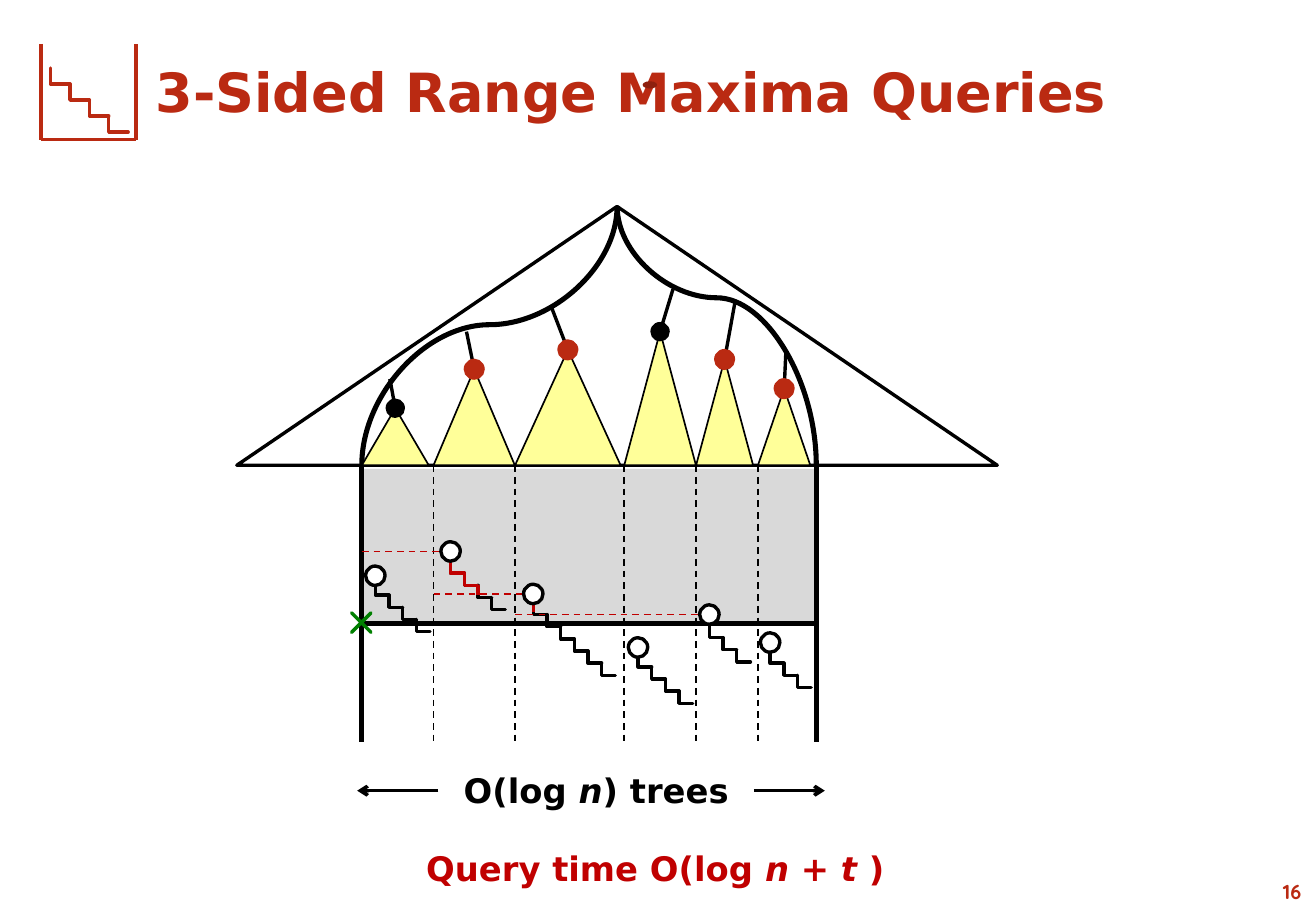
import pptx
import pptx.dml.color
import pptx.enum.dml
import pptx.enum.shapes
import pptx.enum.text
import pptx.util
from lxml import etree

Pt = pptx.util.Pt
MSO = pptx.enum.shapes.MSO_SHAPE
LINK = pptx.enum.shapes.MSO_CONNECTOR
ALIGN = pptx.enum.text.PP_ALIGN
A = "{http://schemas.openxmlformats.org/drawingml/2006/main}"

BLACK, RED, BRICK = "000000", "C00000", "BA2A12"
FONT = "DejaVu Sans"
APEX = (365.8, 122.4)
BASE, BOTTOM, QUERY_Y = 275.8, 440, 369.4
COLUMNS = [214.5, 257, 305.3, 370, 412.6, 449.3, 483.8]
NODE = 11.5
STEP = (8.1, 7.2)

# left, width, root y, end of the link to the search path, root colour
TREES = [
    (214.5, 39.6, 242, (231.1, 224.6), BLACK),
    (257, 48.2, 218.9, (276.5, 196.6), BRICK),
    (305.3, 62.6, 207.4, (326.9, 182.2), BRICK),
    (370, 42.5, 196.6, (398.9, 171.4), BLACK),
    (412.6, 33.8, 213.1, (435.6, 179.3), BRICK),
    (449.3, 31, 230.4, (465.8, 208.8), BRICK),
]
# x, y of the topmost point, y of the first step, steps, reported steps
STAIRCASES = [
    (222.5, 341.3, 345.6, 4, None),
    (267.1, 326.9, 332.6, 4, 2),
    (316.1, 352.1, 357.1, 6, 0),
    (378.2, 383.8, 388.1, 4, None),
    (420.5, 364.3, 370.8, 3, None),
    (456.5, 380.9, 385.9, 3, None),
]


def color(value):
    return pptx.dml.color.RGBColor.from_string(value)


def stroke(sp, value, width):
    sp.line.color.rgb = color(value)
    sp.line.width = Pt(width)


def shape(shapes, kind, box, fill=None, line=None, width=1):
    sp = shapes.add_shape(kind, *map(Pt, box))
    sp.shadow.inherit = False
    if fill:
        sp.fill.solid()
        sp.fill.fore_color.rgb = color(fill)
    else:
        sp.fill.background()
    if line:
        stroke(sp, line, width)
    else:
        sp.line.fill.background()
    return sp


def connector(shapes, start, end, value=BLACK, width=2, dash=False, kind=LINK.STRAIGHT):
    cn = shapes.add_connector(kind, *map(Pt, (*start, *end)))
    stroke(cn, value, width)
    if dash:
        cn.line.dash_style = pptx.enum.dml.MSO_LINE.DASH
    etree.SubElement(cn._element.spPr, A + "effectLst")
    return cn


def search_path(shapes, start, end, bend):
    """Curve that leaves and arrives vertically, as a connector turned by 270 degrees."""
    cx, cy = (start[0] + end[0]) / 2, (start[1] + end[1]) / 2
    dx, dy = (end[0] - start[0]) / 2, (end[1] - start[1]) / 2
    cn = connector(shapes, (cx + dy, cy - dx), (cx - dy, cy + dx), width=3, kind=LINK.CURVE)
    cn._element.spPr.find(A + "xfrm").set("rot", "16200000")
    guides = cn._element.spPr.find(A + "prstGeom").find(A + "avLst")
    etree.SubElement(guides, A + "gd", name="adj1", fmla=f"val {round(bend * 100000)}")


def node(shapes, x, y, fill, line=None, width=1):
    box = (x - NODE / 2, y - NODE / 2, NODE, NODE)
    shape(shapes, MSO.FLOWCHART_CONNECTOR, box, fill, line, width)


def stairs(shapes, x, y, steps, value=BLACK, step=STEP):
    group = shapes.add_group_shape().shapes
    w, h = step
    for i in range(steps):
        sp = shape(group, MSO.CORNER, (x + i * w, y + i * h, w, h), None, value, 2)
        sp.adjustments[0] = sp.adjustments[1] = 0


def text(shapes, box, runs, size, value, font=FONT, align=ALIGN.LEFT, wrap=True):
    """Bold one-line text; runs are pairs of wording and italic."""
    sp = shapes.add_textbox(*map(Pt, box))
    tf = sp.text_frame
    tf.word_wrap = wrap
    p = tf.paragraphs[0]
    p.alignment = align
    p.font.name, p.font.size, p.font.bold = font, Pt(size), True
    p.font.color.rgb = color(value)
    for wording, italic in runs:
        r = p.add_run()
        r.text = wording
        r.font.italic = italic
    return sp


def title(s):
    sp = s.shapes.title
    sp.left, sp.top, sp.width, sp.height = map(Pt, (85, 26, 611.3, 55.4))
    tf = sp.text_frame
    tf.text = "3-Sided Range Maxima Queries"
    tf.auto_size = pptx.enum.text.MSO_AUTO_SIZE.NONE
    tf.vertical_anchor = pptx.enum.text.MSO_ANCHOR.MIDDLE
    p = tf.paragraphs[0]
    p.alignment = ALIGN.LEFT
    p.font.name, p.font.size, p.font.bold = FONT, Pt(32), True
    p.font.color.rgb = color(BRICK)
    shape(s.shapes, MSO.FLOWCHART_CONNECTOR, (380.9, 48.2, 8.6, 4.3), "8E200E")


def icon(shapes):
    left, top, right, bottom = 24.3, 26, 80.7, 82.8
    corners = [(left, top), (left, bottom), (right, bottom), (right, top)]
    for start, end in zip(corners, corners[1:]):
        connector(shapes, start, end, BRICK)
    stairs(shapes, 30, 40.3, 4, BRICK, (11.5, 9.5))


def search_tree(shapes):
    shape(shapes, MSO.ISOSCELES_TRIANGLE, (140.4, APEX[1], 450.7, BASE - APEX[1]), None, BLACK, 2)
    search_path(shapes, APEX, (COLUMNS[-1], BASE), 0.353)
    search_path(shapes, APEX, (COLUMNS[0], BASE), 0.457)
    for left, width, top, link_end, fill in TREES:
        sp = shape(shapes, MSO.ISOSCELES_TRIANGLE, (left, top, width, BASE - top), "FFFF99", BLACK)
        root = (left + width / 2, top)
        connector(shapes, root, link_end).begin_connect(sp, 0)
        node(shapes, *root, fill, fill if fill == BRICK else None)


def query_range(shapes):
    for x in COLUMNS:
        side = x in (COLUMNS[0], COLUMNS[-1])
        connector(shapes, (x, BASE), (x, BOTTOM), width=3 if side else 1, dash=not side)
    connector(shapes, (COLUMNS[0], QUERY_Y), (COLUMNS[-1], QUERY_Y), width=3)


def staircases(shapes):
    for x, _, y, steps, reported in STAIRCASES:
        stairs(shapes, x, y, steps)
        if reported is not None:
            if reported:
                stairs(shapes, x, y, reported, RED)
            drop_x, drop_y = x + reported * STEP[0], y + reported * STEP[1]
            connector(shapes, (drop_x, drop_y), (drop_x, drop_y + 5.8), RED)
    cross = shape(shapes, MSO.MATH_MULTIPLY, (203, 357.9, 22.3, 22.3), None, "008000", 2)
    cross.adjustments[0] = 0
    for column, tree in enumerate((1, 2, 4)):
        x, y = STAIRCASES[tree][:2]
        connector(shapes, (COLUMNS[column], y), (x - NODE / 2, y), RED, 1, dash=True)
    for x, y, *_ in STAIRCASES:
        node(shapes, x, y, "FFFFFF", BLACK, 2)


def tree_count(shapes):
    runs = [("O(log ", False), ("n", True), (") trees", False)]
    label = text(shapes, (259.9, 452.9, 187, 31.6), runs, 20, BLACK, align=ALIGN.CENTER)
    y = 468.7
    for site, start, end in ((3, 446.9, 488.9), (1, 259.9, 211.7)):
        cn = connector(shapes, (start, y), (end, y))
        cn.begin_connect(label, site)
        etree.SubElement(cn.line._get_or_add_ln(), A + "tailEnd", type="arrow")


def main():
    prs = pptx.Presentation()
    prs.slide_width, prs.slide_height = Pt(780), Pt(540)
    s = prs.slides.add_slide(prs.slide_layouts[5])
    title(s)
    icon(s.shapes)
    shape(s.shapes, MSO.RECTANGLE, (214, 277.9, 269.3, 92), "D9D9D9")
    search_tree(s.shapes)
    query_range(s.shapes)
    staircases(s.shapes)
    tree_count(s.shapes)
    runs = [("Query time O(log ", False), ("n + t ", True), (")", False)]
    text(s.shapes, (245.5, 499, 290, 31.6), runs, 20, RED, wrap=False)
    text(s.shapes, (707.8, 517.7, 70.6, 21.6), [("16", False)], 12, BRICK, "Quicksand", ALIGN.RIGHT)
    prs.save("out.pptx")


if __name__ == "__main__":
    main()
